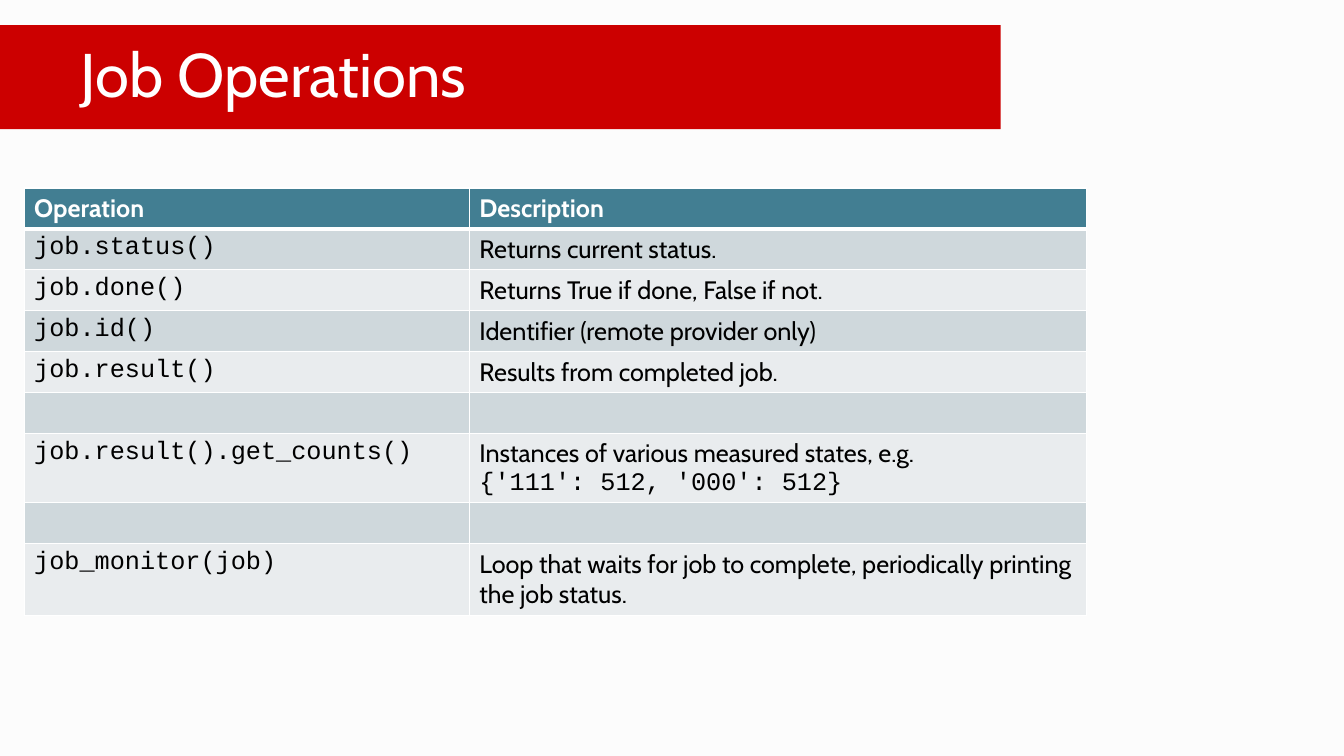
from dataclasses import dataclass

from lxml import etree
from pptx import Presentation
from pptx.dml.color import RGBColor
from pptx.enum.shapes import MSO_SHAPE
from pptx.enum.text import MSO_ANCHOR, PP_ALIGN
from pptx.oxml.ns import qn
from pptx.util import Emu, Pt

RECTANGLE = MSO_SHAPE.RECTANGLE
MIDDLE = MSO_ANCHOR.MIDDLE
LEFT = PP_ALIGN.LEFT
BLANK_LAYOUT = 6
EMU_PER_PX = 9525


@dataclass(frozen=True)
class Theme:
    background: str = "FCFCFC"
    banner: str = "CC0000"
    header: str = "427E92"
    bands: tuple = ("CFD8DC", "E9ECEE")
    light: str = "FFFFFF"
    dark: str = "000000"
    sans: str = "Cabin"
    mono: str = "Courier New"
    title_size: int = 44
    body_size: int = 18
    thin: int = 1
    thick: int = 3


THEME = Theme()
COLUMN_WIDTHS = (424, 588)
ROW_HEIGHT = 39
TALL_ROWS = {6: 66, 8: 68}
HEADINGS = ("Operation", "Description")
OPERATIONS = (
    ("job.status()", "Returns current status."),
    ("job.done()", "Returns True if done, False if not."),
    ("job.id()", "Identifier (remote provider only)"),
    ("job.result()", "Results from completed job."),
    ("", ""),
    ("job.result().get_counts()", "Instances of various measured states, e.g."),
    ("", ""),
    ("job_monitor(job)",
     "Loop that waits for job to complete, periodically printing the job status."),
)
COUNTS_ROW = 6
COUNTS_EXAMPLE = "{'111': 512, '000': 512}"


def px(length):
    return Emu(length * EMU_PER_PX)


def color(value):
    return RGBColor.from_string(value)


def paint(target, value):
    target.fill.solid()
    target.fill.fore_color.rgb = color(value)


def add_text(paragraph, text, *, font=THEME.sans, size=THEME.body_size,
             ink=THEME.dark, bold=False):
    run = paragraph.add_run()
    run.text = text
    run.font.name = font
    run.font.size = Pt(size)
    run.font.bold = bold
    run.font.color.rgb = color(ink)


def add_banner(slide, title):
    banner = slide.shapes.add_shape(RECTANGLE, px(0), px(24), px(953), px(99))
    banner.shadow.inherit = False
    paint(banner, THEME.banner)
    banner.line.fill.background()
    frame = banner.text_frame
    frame.word_wrap = True
    frame.vertical_anchor = MIDDLE
    frame.margin_left, frame.margin_right = px(77), px(10)
    frame.margin_top = frame.margin_bottom = px(5)
    paragraph = frame.paragraphs[0]
    paragraph.alignment = LEFT
    paragraph.line_spacing = 0.9
    add_text(paragraph, title, size=THEME.title_size, ink=THEME.light)


def set_borders(cell, top, bottom):
    properties = cell._tc.get_or_add_tcPr()
    widths = {"L": THEME.thin, "R": THEME.thin, "T": top, "B": bottom}
    for side, width in widths.items():
        line = etree.SubElement(properties, qn(f"a:ln{side}"), w=str(Pt(width)))
        fill = etree.SubElement(line, qn("a:solidFill"))
        etree.SubElement(fill, qn("a:srgbClr"), val=THEME.light)


def fill_cell(cell, row, text, **text_format):
    set_borders(cell,
                THEME.thick if row == 1 else THEME.thin,
                THEME.thick if row == 0 else THEME.thin)
    paint(cell, THEME.bands[(row - 1) % 2] if row else THEME.header)
    if text:
        add_text(cell.text_frame.paragraphs[0], text, **text_format)


def add_operations_table(slide):
    row_count = len(OPERATIONS) + 1
    heights = [TALL_ROWS.get(row, ROW_HEIGHT) for row in range(row_count)]
    table = slide.shapes.add_table(
        row_count, len(COLUMN_WIDTHS), px(23), px(179),
        px(sum(COLUMN_WIDTHS)), px(sum(heights))).table
    for column, width in zip(table.columns, COLUMN_WIDTHS):
        column.width = px(width)
    for row, height in zip(table.rows, heights):
        row.height = px(height)
    for column, heading in enumerate(HEADINGS):
        fill_cell(table.cell(0, column), 0, heading, ink=THEME.light, bold=True)
    for row, (operation, description) in enumerate(OPERATIONS, start=1):
        fill_cell(table.cell(row, 0), row, operation, font=THEME.mono)
        fill_cell(table.cell(row, 1), row, description)
    counts = table.cell(COUNTS_ROW, 1).text_frame.paragraphs[0]
    counts.add_line_break()
    add_text(counts, COUNTS_EXAMPLE, font=THEME.mono)


def main():
    presentation = Presentation()
    presentation.slide_width, presentation.slide_height = px(1280), px(720)
    slide = presentation.slides.add_slide(presentation.slide_layouts[BLANK_LAYOUT])
    paint(slide.background, THEME.background)
    add_banner(slide, "Job Operations")
    add_operations_table(slide)
    presentation.save("out.pptx")


if __name__ == "__main__":
    main()
